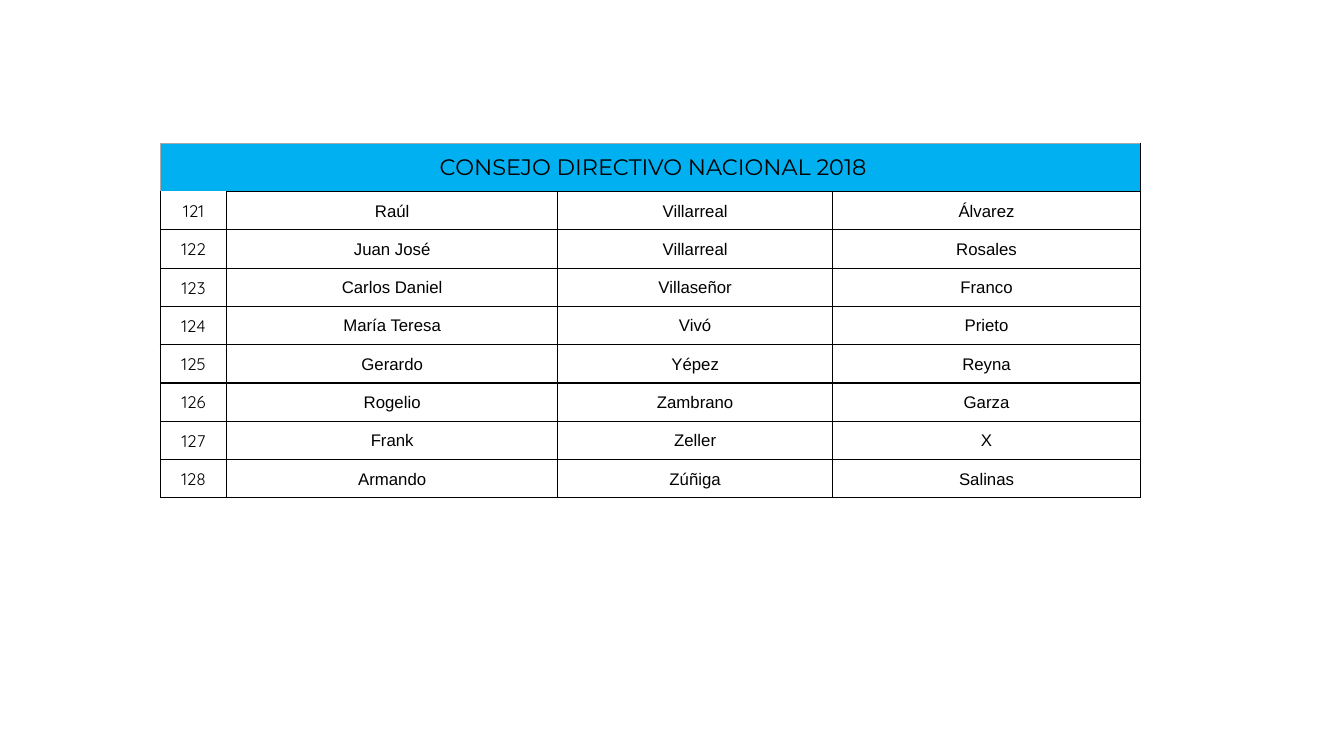
from lxml import etree
from pptx import Presentation
from pptx.dml.color import RGBColor
from pptx.enum.text import MSO_ANCHOR, PP_ALIGN
from pptx.oxml.ns import qn
from pptx.util import Inches, Pt

CENTER = PP_ALIGN.CENTER
MIDDLE = MSO_ANCHOR.MIDDLE

TITLE = " CONSEJO DIRECTIVO NACIONAL 2018"
FIRST_NUMBER = 121
MEMBERS = [
    ("Raúl", "Villarreal", "Álvarez"),
    ("Juan José", "Villarreal", "Rosales"),
    ("Carlos Daniel", "Villaseñor", "Franco"),
    ("María Teresa", "Vivó", "Prieto"),
    ("Gerardo", "Yépez", "Reyna"),
    ("Rogelio", "Zambrano", "Garza"),
    ("Frank", "Zeller", "X"),
    ("Armando", "Zúñiga", "Salinas"),
]

THEME = {
    "header": "00B0F0", "body": "FFFFFF", "text": "000000",
    "line": "000000", "soft_line": "AAAAAA", "line_width": 1,
    "title_font": "Montserrat", "number_font": "Quicksand", "name_font": "Arial",
    "title_size": 16, "body_size": 12,
}
LEFT, TOP = 1.59, 1.42
COLUMN_WIDTHS = [0.66, 3.28, 2.73, 3.05]
TITLE_HEIGHT, ROW_HEIGHT = 0.48, 0.38
BODY_INSETS = (0.01, 0.01, 0.01, 0)


def set_borders(cell, borders):
    tc_pr = cell._tc.get_or_add_tcPr()
    for side in "LRTB":
        if side in borders:
            ln = etree.SubElement(tc_pr, qn(f"a:ln{side}"), w=str(Pt(THEME["line_width"])))
            fill = etree.SubElement(ln, qn("a:solidFill"))
            etree.SubElement(fill, qn("a:srgbClr"), val=borders[side])


def fill_cell(cell, text, font, size, color, insets, borders):
    set_borders(cell, borders)
    cell.fill.solid()
    cell.fill.fore_color.rgb = RGBColor.from_string(color)
    cell.margin_left, cell.margin_top, cell.margin_right, cell.margin_bottom = map(Inches, insets)
    cell.vertical_anchor = MIDDLE
    cell.text_frame.text = text
    p = cell.text_frame.paragraphs[0]
    p.alignment = CENTER
    r = p.runs[0]
    r.font.name = font
    r.font.size = Pt(size)
    r.font.color.rgb = RGBColor.from_string(THEME["text"])


def add_council_table(s):
    heights = [TITLE_HEIGHT] + [ROW_HEIGHT] * len(MEMBERS)
    table = s.shapes.add_table(
        len(heights), len(COLUMN_WIDTHS), Inches(LEFT), Inches(TOP),
        Inches(sum(COLUMN_WIDTHS)), Inches(sum(heights))).table
    table.first_row = False
    table.horz_banding = False
    for column, width in zip(table.columns, COLUMN_WIDTHS):
        column.width = Inches(width)
    for row, height in zip(table.rows, heights):
        row.height = Inches(height)

    title = table.cell(0, 0)
    title.merge(table.cell(0, len(COLUMN_WIDTHS) - 1))
    soft, line = THEME["soft_line"], THEME["line"]
    fill_cell(title, TITLE, THEME["title_font"], THEME["title_size"], THEME["header"],
              (0, 0, 0, 0), {"L": soft, "T": soft, "R": line})

    for i, names in enumerate(MEMBERS):
        for j, text in enumerate((str(FIRST_NUMBER + i), *names)):
            font = THEME["name_font"] if j else THEME["number_font"]
            sides = "LRTB" if i or j else "LRB"
            fill_cell(table.cell(i + 1, j), text, font, THEME["body_size"], THEME["body"],
                      BODY_INSETS, dict.fromkeys(sides, line))


def main():
    prs = Presentation()
    prs.slide_width = Inches(13.33)
    prs.slide_height = Inches(7.5)
    s = prs.slides.add_slide(prs.slide_layouts[6])
    add_council_table(s)
    prs.save("out.pptx")


if __name__ == "__main__":
    main()
